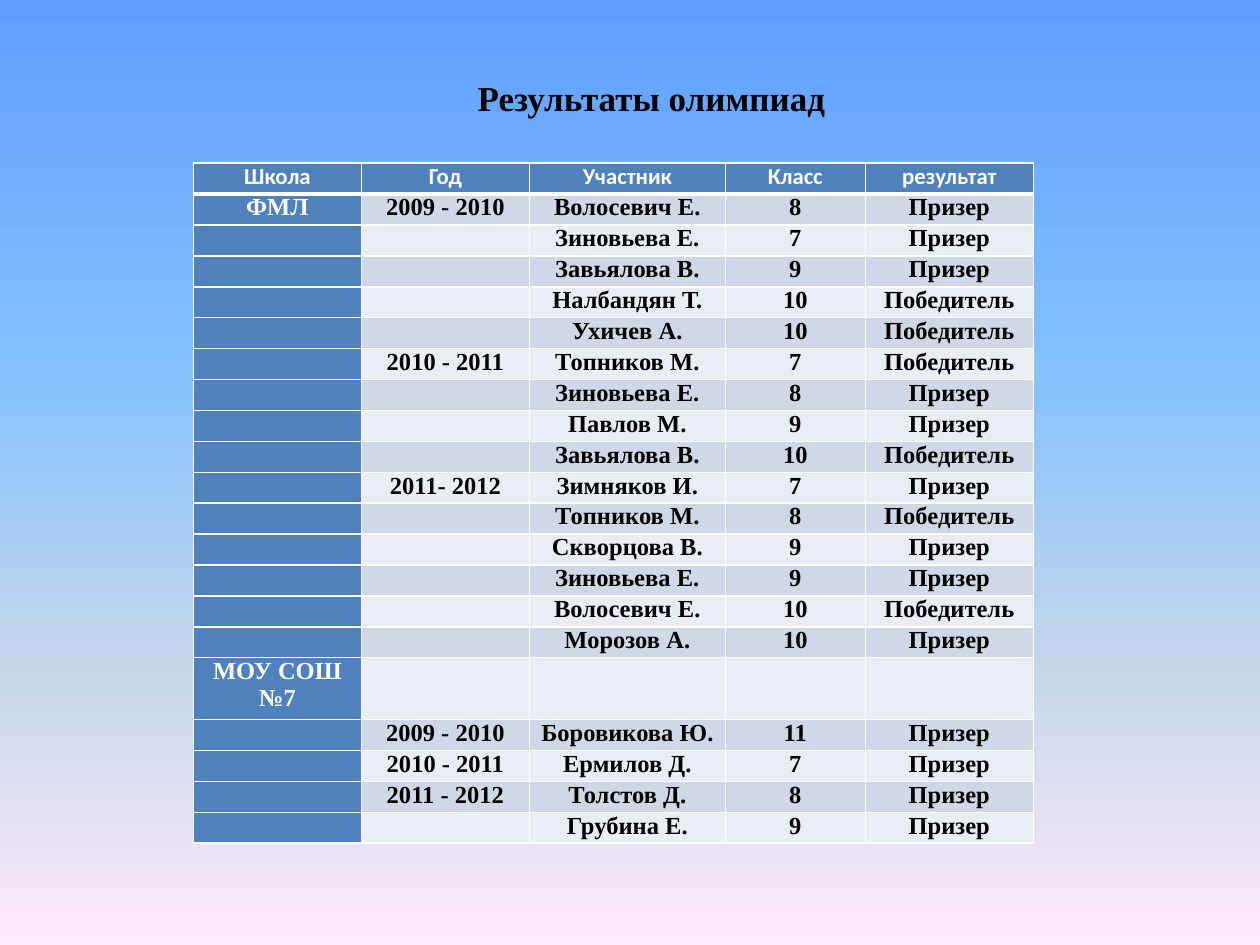
from dataclasses import dataclass

import pptx
import pptx.dml.color
import pptx.enum.text
import pptx.oxml
import pptx.oxml.ns
import pptx.util
from pptx.util import Cm, Pt

HEADER_FILL, BAND_FILLS = "4F81BD", ("E9EDF4", "D0D8E8")
WHITE, BLACK = "FFFFFF", "000000"
SERIF = "Times New Roman"
BACKGROUND = ((0, "5E9EFF"), (40, "85C2FF"), (70, "C4D6EB"), (100, "FFEBFA"))
COLUMN_SHARES = (6, 6, 7, 5, 6)
CENTER = pptx.enum.text.PP_ALIGN.CENTER


@dataclass
class Entry:
    school: str = ""
    year: str = ""
    name: str = ""
    grade: str = ""
    result: str = ""

    def texts(self) -> tuple[str, ...]:
        return self.school, self.year, self.name, self.grade, self.result


WINNER, PRIZE = "Победитель", "Призер"
ENTRIES = [
    Entry("Школа", "Год", "Участник", "Класс", "результат"),
    Entry("ФМЛ", "2009 - 2010", "Волосевич Е.", "8", PRIZE),
    Entry("", "", "Зиновьева Е.", "7", PRIZE),
    Entry("", "", "Завьялова В.", "9", PRIZE),
    Entry("", "", "Налбандян Т.", "10", WINNER),
    Entry("", "", "Ухичев А.", "10", WINNER),
    Entry("", "2010 - 2011", "Топников М.", "7", WINNER),
    Entry("", "", "Зиновьева Е.", "8", PRIZE),
    Entry("", "", "Павлов М.", "9", PRIZE),
    Entry("", "", "Завьялова В.", "10", WINNER),
    Entry("", "2011- 2012", "Зимняков И.", "7", PRIZE),
    Entry("", "", "Топников М.", "8", WINNER),
    Entry("", "", "Скворцова В.", "9", PRIZE),
    Entry("", "", "Зиновьева Е.", "9", PRIZE),
    Entry("", "", "Волосевич Е.", "10", WINNER),
    Entry("", "", "Морозов А.", "10", PRIZE),
    Entry("МОУ СОШ №7"),
    Entry("", "2009 - 2010", "Боровикова Ю.", "11", PRIZE),
    Entry("", "2010 - 2011", "Ермилов Д.", "7", PRIZE),
    Entry("", "2011 - 2012", "Толстов Д.", "8", PRIZE),
    Entry("", "", "Грубина Е.", "9", PRIZE),
]


def rgb(value: str) -> pptx.dml.color.RGBColor:
    return pptx.dml.color.RGBColor.from_string(value)


def apply(obj, values: dict) -> None:
    for key, value in values.items():
        setattr(obj, key, value)


def write(p, text: str, font: str, size: float, color: str) -> None:
    """Put centred bold text in a paragraph; an empty one only keeps its size."""
    p.alignment = CENTER
    if not text:
        end = p._p.makeelement(pptx.oxml.ns.qn("a:endParaRPr"), {"sz": str(size * 100)})
        p._p.append(end)
        return
    r = p.add_run()
    r.text = text
    apply(r.font, {"name": font, "size": Pt(size), "bold": True})
    r.font.color.rgb = rgb(color)


def set_borders(cell, widths: dict[str, float]) -> None:
    tc_pr = cell._tc.get_or_add_tcPr()
    for i, (side, width) in enumerate(widths.items()):
        tc_pr.insert(i, pptx.oxml.parse_xml(
            f'<a:ln{side} {pptx.oxml.ns.nsdecls("a")} w="{Pt(width)}">'
            f'<a:solidFill><a:srgbClr val="{WHITE}"/></a:solidFill></a:ln{side}>'))


def fill_background(s, stops: tuple) -> None:
    fill = s.background.fill
    fill.gradient()
    fill.gradient_angle = 270
    gs_lst = s.background._cSld.find(".//" + pptx.oxml.ns.qn("a:gsLst"))
    for stop in list(gs_lst):
        gs_lst.remove(stop)
    for position, color in stops:
        gs_lst.append(pptx.oxml.parse_xml(
            f'<a:gs {pptx.oxml.ns.nsdecls("a")} pos="{position * 1000}">'
            f'<a:srgbClr val="{color}"/></a:gs>'))


def add_title(s, text: str) -> None:
    sp = s.shapes.title
    apply(sp, {"left": Cm(0.76), "top": Cm(1.42), "width": Cm(18.95), "height": Cm(1.88)})
    tf = sp.text_frame
    # The wide left margin moves the centred title over the table
    apply(tf, {"margin_left": Cm(6.05), "word_wrap": True,
               "vertical_anchor": pptx.enum.text.MSO_ANCHOR.TOP,
               "auto_size": pptx.enum.text.MSO_AUTO_SIZE.NONE})
    write(tf.paragraphs[0], text, SERIF, 20, BLACK)


def add_results(s, entries: list[Entry]) -> None:
    width, height = Cm(16.93), Cm(13.72)
    table = s.shapes.add_table(len(entries), len(COLUMN_SHARES),
                               Cm(3.9), Cm(3.29), width, height).table
    table.first_col = True
    for column, share in zip(table.columns, COLUMN_SHARES):
        column.width = width * share // sum(COLUMN_SHARES)

    # A school without results on its row takes two lines
    lines = [1 if e.name else 2 for e in entries]
    for i, entry in enumerate(entries):
        table.rows[i].height = height * lines[i] // sum(lines)
        for j, text in enumerate(entry.texts()):
            cell = table.cell(i, j)
            heading = i == 0 or j == 0
            apply(cell, {"margin_left": Cm(0.18), "margin_right": Cm(0.18),
                         "margin_top": 0, "margin_bottom": 0})
            cell.fill.solid()
            cell.fill.fore_color.rgb = rgb(HEADER_FILL if heading else BAND_FILLS[i % 2])
            set_borders(cell, {"L": 1, "R": 1, "T": 3 if i == 1 else 1,
                               "B": 3 if i == 0 else 1})
            font, size = ("Calibri", 13) if i == 0 else (SERIF, 14)
            write(cell.text_frame.paragraphs[0], text, font, size,
                  WHITE if heading else BLACK)


def main() -> None:
    prs = pptx.Presentation()
    apply(prs, {"slide_width": Cm(25.4), "slide_height": Cm(19.05)})
    s = prs.slides.add_slide(prs.slide_layouts[5])
    fill_background(s, BACKGROUND)
    add_title(s, "Результаты олимпиад")
    add_results(s, ENTRIES)
    prs.save("out.pptx")


if __name__ == "__main__":
    main()
